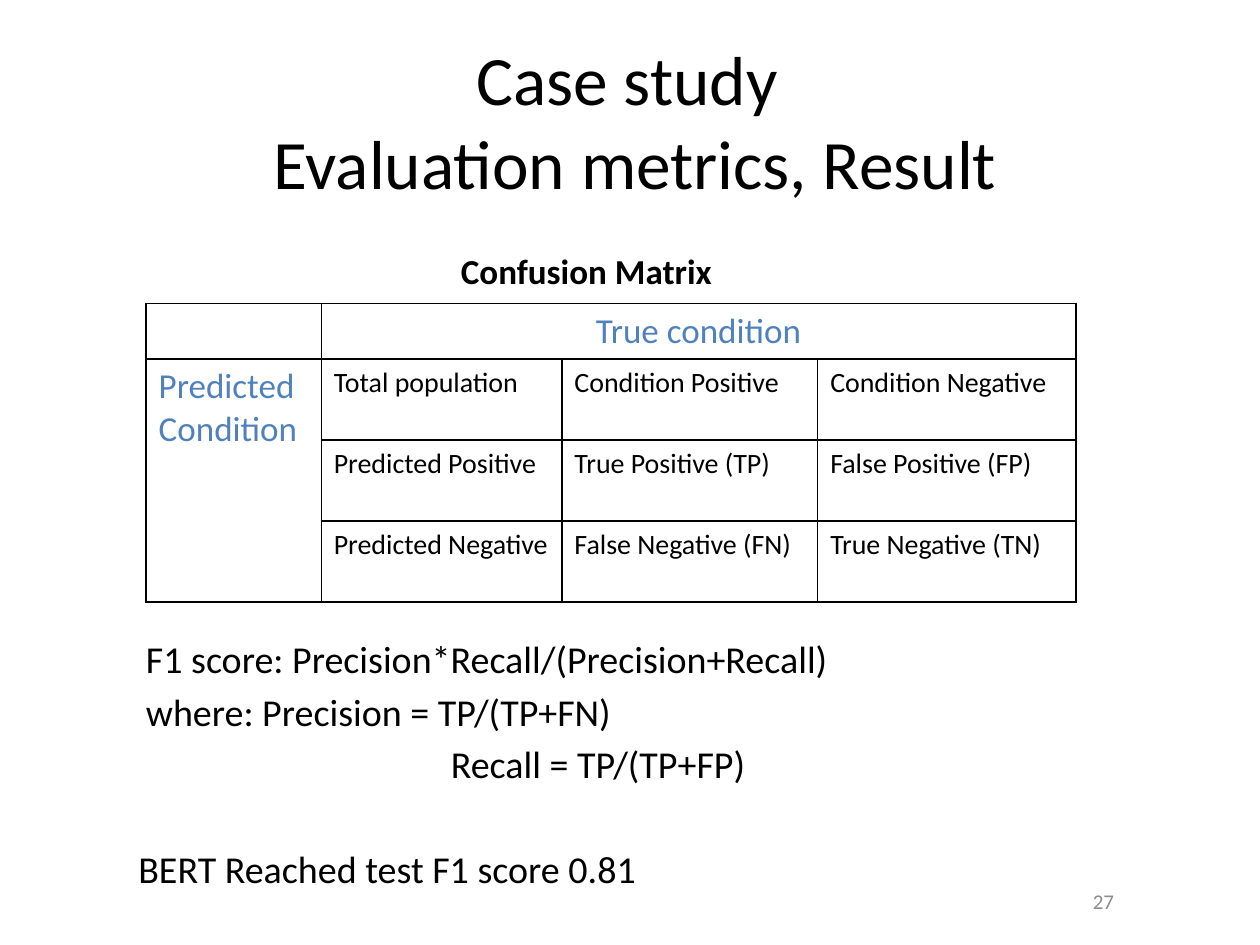
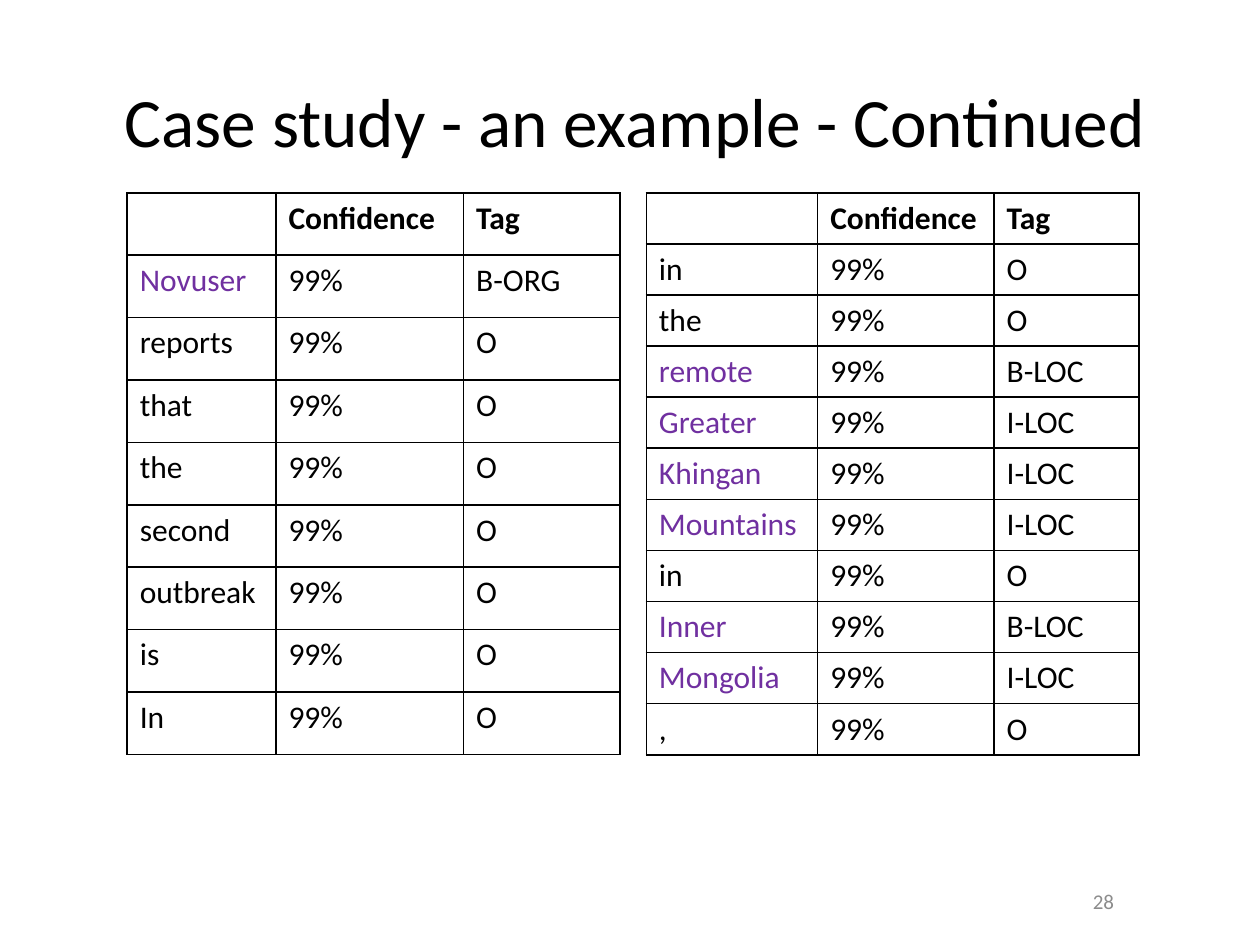
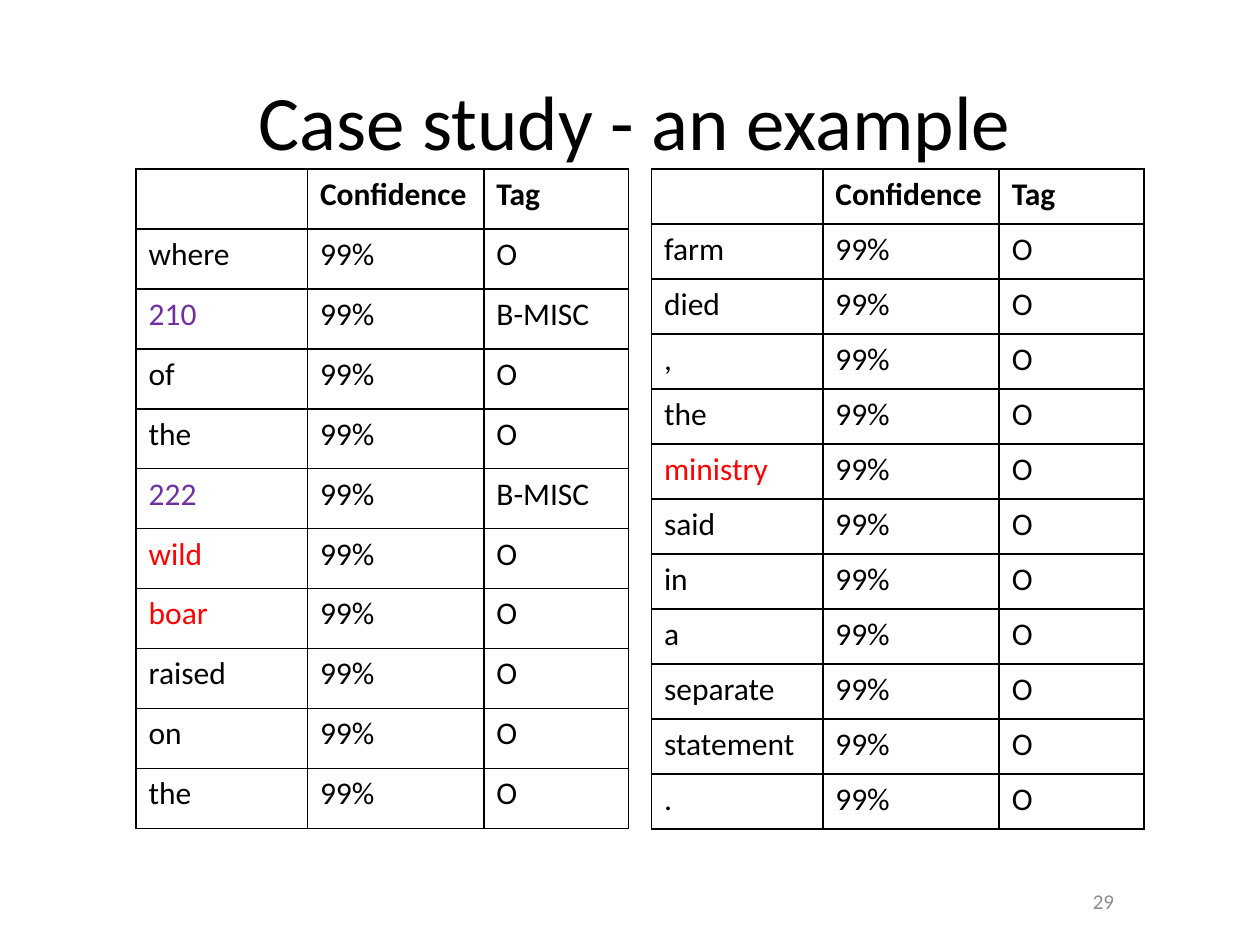
"""Build three case-study slides: metrics with a confusion matrix, and tagged tokens."""
from dataclasses import dataclass

from lxml import etree
from pptx import Presentation
from pptx.dml.color import RGBColor
from pptx.enum.text import MSO_ANCHOR, MSO_AUTO_SIZE, PP_ALIGN
from pptx.oxml.ns import qn
from pptx.util import Inches, Pt

LEFT, CENTER, RIGHT = PP_ALIGN.LEFT, PP_ALIGN.CENTER, PP_ALIGN.RIGHT
TOP, MIDDLE = MSO_ANCHOR.TOP, MSO_ANCHOR.MIDDLE
NO_AUTOFIT = MSO_AUTO_SIZE.NONE
TITLE_ONLY = 5
GRID_COLUMNS, GRID_ROWS = 100, 75


@dataclass(frozen=True)
class Theme:
    font: str = "Calibri"
    text: str = "000000"
    paper: str = "FFFFFF"
    accent: str = "4F81BD"
    entity: str = "7030A0"
    missed: str = "FF0000"
    muted: str = "8C8C8C"
    title: float = 39.6
    large_title: float = 44
    body: float = 21.7
    heading: float = 20
    token: float = 18
    matrix: float = 16
    number: float = 12
    border: float = 1


THEME = Theme()
TITLE_BOX = (8.3, 3.3, 84.2, 11.7)
NUMBER_BOX = (79.5, 69.5, 9.9, 4)
WIDE_WORDS = (13.6, 14, 11.5)
NARROW_WORDS = (11.8, 14.9, 12.4)
MISSED_WORDS = {"wild", "boar", "ministry"}


class Deck:
    """Hold the theme and the current slide, and place elements on a grid."""

    def __init__(self, theme):
        self.theme = theme
        self.presentation = Presentation()
        self.presentation.slide_width = Inches(10)
        self.presentation.slide_height = Inches(7.5)
        self.column = self.presentation.slide_width / GRID_COLUMNS
        self.row = self.presentation.slide_height / GRID_ROWS
        self.slide = None

    def place(self, box):
        """Turn grid columns and rows into lengths."""
        units = (self.column, self.row, self.column, self.row)
        return [int(share * unit) for share, unit in zip(box, units)]

    def fill_paragraph(self, paragraph, text, size, color=None, bold=False, align=LEFT,
                       indent=0, before=0):
        """Fill one paragraph and format its runs and line breaks."""
        paragraph.text = text
        paragraph.alignment = align
        paragraph.space_before = Pt(before)
        if indent:
            paragraph._p.get_or_add_pPr().set("marL", str(int(indent * self.column)))
        formats = {"name": self.theme.font, "size": Pt(size), "bold": bold}
        for run in paragraph.runs:
            for name, value in formats.items():
                setattr(run.font, name, value)
            run.font.color.rgb = RGBColor.from_string(color or self.theme.text)
        for line_break in paragraph._p.findall(qn("a:br")):
            etree.SubElement(line_break, qn("a:rPr"), sz=str(round(size * 100)))

    def frame(self, shape, anchor, inset):
        """Set wrapping, anchor and top inset of a shape's text."""
        formats = {"word_wrap": True, "auto_size": NO_AUTOFIT,
                   "vertical_anchor": anchor, "margin_top": int(inset * self.row)}
        for name, value in formats.items():
            setattr(shape.text_frame, name, value)
        return shape.text_frame

    def new_slide(self, title, number, size):
        """Add a slide with its title and number."""
        layout = self.presentation.slide_layouts[TITLE_ONLY]
        self.slide = self.presentation.slides.add_slide(layout)
        self.text(NUMBER_BOX, [{"text": str(number), "color": self.theme.muted,
                                "align": RIGHT}], self.theme.number, MIDDLE)
        shape = self.slide.shapes.title
        shape.left, shape.top, shape.width, shape.height = self.place(TITLE_BOX)
        frame = self.frame(shape, MIDDLE, 1.2)
        self.fill_paragraph(frame.paragraphs[0], title, size, align=CENTER)

    def text(self, box, lines, size, anchor=TOP, inset=0.5):
        """Add a text box with one paragraph for each line."""
        shape = self.slide.shapes.add_textbox(*self.place(box))
        frame = self.frame(shape, anchor, inset)
        for index, line in enumerate(lines):
            paragraph = frame.add_paragraph() if index else frame.paragraphs[0]
            self.fill_paragraph(paragraph, size=size, **line)

    def border(self, cell):
        """Draw a thin line on every side of a cell."""
        properties = cell._tc.get_or_add_tcPr()
        for index, side in enumerate(("lnL", "lnR", "lnT", "lnB")):
            line = etree.Element(qn(f"a:{side}"), w=str(Pt(self.theme.border)))
            fill = etree.SubElement(line, qn("a:solidFill"))
            etree.SubElement(fill, qn("a:srgbClr"), val=self.theme.text)
            properties.insert(index, line)

    def table(self, left, top, widths, heights, cells, merges=()):
        """Add a ruled table from rows of cell formats."""
        box = self.place((left, top, sum(widths), sum(heights)))
        shape = self.slide.shapes.add_table(len(heights), len(widths), *box)
        table = shape.table
        table.first_row = table.horz_banding = False
        for column, width in zip(table.columns, widths):
            column.width = int(width * self.column)
        for row, height in zip(table.rows, heights):
            row.height = int(height * self.row)
        for row, formats in zip(table.rows, cells):
            for cell, cell_format in zip(row.cells, formats):
                cell.fill.solid()
                cell.fill.fore_color.rgb = RGBColor.from_string(self.theme.paper)
                self.border(cell)
                if cell_format["text"]:
                    self.fill_paragraph(cell.text_frame.paragraphs[0], **cell_format)
        for first, last in merges:
            table.cell(*first).merge(table.cell(*last))

    def token_table(self, left, top, height, widths, tokens):
        """Add a table of words, confidences and tags, coloured by tag."""
        size = self.theme.token
        cells = [[{"text": text, "size": size, "bold": True}
                  for text in ("", "Confidence", "Tag")]]
        for token in tokens.split():
            word, _, tag = token.partition("/")
            color = self.theme.entity if tag else self.theme.text
            if word in MISSED_WORDS:
                color = self.theme.missed
            cells.append([{"text": word, "size": size, "color": color},
                          {"text": "99%", "size": size},
                          {"text": tag or "O", "size": size}])
        heights = [height / len(cells)] * len(cells)
        self.table(left, top, widths, heights, cells)


def add_metrics_slide(deck):
    """Add the confusion matrix and the score formulas."""
    theme = deck.theme
    deck.new_slide("Case study \vEvaluation metrics, Result", 27, theme.title)
    deck.text((5, 45.6, 90, 23.9), [
        {"text": "F1 score: Precision*Recall/(Precision+Recall)", "indent": 5.6},
        {"text": "where: Precision = TP/(TP+FN)", "indent": 5.6, "before": 4},
        {"text": "Recall = TP/(TP+FP)", "indent": 29.8, "before": 4},
        {"text": "BERT Reached test F1 score 0.81", "indent": 5, "before": 34},
    ], theme.body, inset=4.85)
    labels = [
        ("", "True condition", "", ""),
        ("Predicted Condition", "Total population", "Condition Positive",
         "Condition Negative"),
        ("", "Predicted Positive", "True Positive (TP)", "False Positive (FP)"),
        ("", "Predicted Negative", "False Negative (FN)", "True Negative (TN)"),
    ]
    heading = {"size": theme.heading, "color": theme.accent}
    cells = [[{"text": text, **(heading if 0 in (row, column)
                                else {"size": theme.matrix})}
              for column, text in enumerate(line)] for row, line in enumerate(labels)]
    cells[0][1]["align"] = CENTER
    deck.table(11.6, 24.1, (13.9, 19.1, 20.3, 20.5), (4.4, 6.43, 6.43, 6.43), cells,
               merges=[((0, 1), (0, 3)), ((1, 0), (3, 0))])
    deck.text((28.8, 19.3, 30.5, 4.5), [{"text": "Confusion Matrix", "bold": True,
                                         "align": CENTER, "indent": 5}], theme.heading)


def add_token_slide(deck, title, number, size, top, height, tables):
    """Add a slide with token tables side by side."""
    deck.new_slide(title, number, size)
    for left, widths, tokens in tables:
        deck.token_table(left, top, height, widths, tokens)


def main():
    """Build and save the presentation."""
    deck = Deck(THEME)
    add_metrics_slide(deck)
    add_token_slide(deck, "Case study - an example - Continued", 28, THEME.title,
                    15.3, 44.6, [
        (10.1, NARROW_WORDS, "Novuser/B-ORG reports that the second outbreak is In"),
        (51.3, WIDE_WORDS, "in the remote/B-LOC Greater/I-LOC Khingan/I-LOC "
                           "Mountains/I-LOC in Inner/B-LOC Mongolia/I-LOC ,"),
    ])
    add_token_slide(deck, "Case study - an example", 29, THEME.large_title,
                    13.4, 52.4, [
        (10.8, WIDE_WORDS, "where 210/B-MISC of the 222/B-MISC wild boar raised on the"),
        (51.7, WIDE_WORDS, "farm died , the ministry said in a separate statement ."),
    ])
    deck.presentation.save("out.pptx")


if __name__ == "__main__":
    main()
